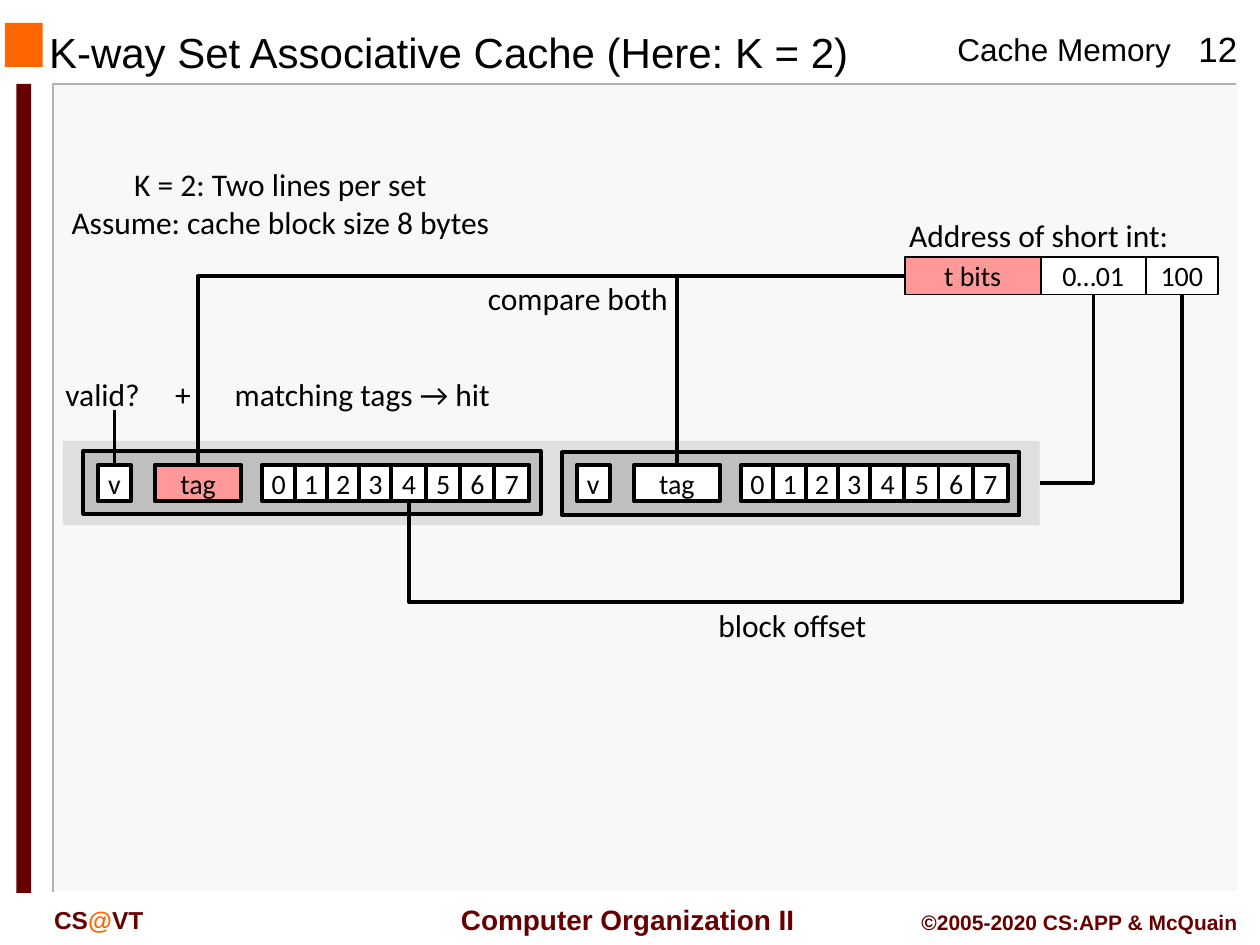
from dataclasses import dataclass
from typing import NamedTuple, Optional

from lxml.etree import SubElement
from pptx import Presentation
from pptx.dml.color import RGBColor
from pptx.enum.shapes import MSO_CONNECTOR, MSO_SHAPE
from pptx.enum.text import MSO_ANCHOR, MSO_AUTO_SIZE, PP_ALIGN
from pptx.oxml.ns import qn
from pptx.shapes.autoshape import Shape
from pptx.shapes.connector import Connector
from pptx.slide import Slide
from pptx.util import Cm, Pt


@dataclass(frozen=True)
class Theme:
    black: str = "000000"
    white: str = "FFFFFF"
    panel: str = "F8F8F8"
    panel_edge: str = "B2B2B2"
    orange: str = "FF6600"
    maroon: str = "660000"
    tag: str = "FF9999"
    cache_set: str = "DFDFDF"
    cache_line: str = "BFBFBF"
    frame_font: str = "Arial"
    body_font: str = "Calibri"
    title_size: float = 24
    number_size: float = 20
    label_size: float = 18
    cell_size: float = 16
    footer_size: float = 16
    course_size: float = 14
    credit_size: float = 12
    thin: float = 1
    wire: float = 2
    thick: float = 2.25


THEME = Theme()
TOP, LEFT, BOTTOM, RIGHT = range(4)


class Area(NamedTuple):
    """Left, top, width and height in centimetres."""
    left: float
    top: float
    width: float
    height: float

    def lengths(self) -> list[Cm]:
        return [Cm(value) for value in self]


class CacheLine(NamedTuple):
    left: float
    top: float
    tag_color: str


class CacheLineParts(NamedTuple):
    valid: Shape
    tag: Shape
    data: list[Shape]


def write(box: Shape, text: str, *, size: float, font: str = THEME.body_font,
          color: str = THEME.black, bold: bool = False,
          align: PP_ALIGN = PP_ALIGN.CENTER, wrap: bool = False,
          anchor: MSO_ANCHOR = MSO_ANCHOR.TOP, accent: str = "") -> None:
    """Fill a box with one paragraph per line; the accent word turns orange."""
    frame = box.text_frame
    frame.word_wrap = wrap
    frame.vertical_anchor = anchor
    for index, line in enumerate(text.split("\n")):
        para = frame.add_paragraph() if index else frame.paragraphs[0]
        para.alignment = align
        before, mark, after = line.partition(accent) if accent else (line, "", "")
        for piece, tint in ((before, color), (mark, THEME.orange), (after, color)):
            if piece:
                span = para.add_run()
                span.text = piece
                span.font.name = font
                span.font.size = Pt(size)
                span.font.bold = bold
                span.font.color.rgb = RGBColor.from_string(tint)


def add_label(page: Slide, area: Area, text: str, *,
              size: float = THEME.label_size, **style) -> Shape:
    box = page.shapes.add_textbox(*area.lengths())
    write(box, text, size=size, **style)
    box.text_frame.auto_size = MSO_AUTO_SIZE.SHAPE_TO_FIT_TEXT
    return box


def add_box(page: Slide, area: Area, fill: str, *, text: str = "",
            line: Optional[float] = None) -> Shape:
    box = page.shapes.add_shape(MSO_SHAPE.RECTANGLE, *area.lengths())
    box.shadow.inherit = False
    box.fill.solid()
    box.fill.fore_color.rgb = RGBColor.from_string(fill)
    if line is None:
        box.line.fill.background()
    else:
        box.line.color.rgb = RGBColor.from_string(THEME.black)
        box.line.width = Pt(line)
    if text:
        write(box, text, size=THEME.cell_size, anchor=MSO_ANCHOR.MIDDLE)
    return box


def add_edge(page: Slide, points: list[tuple[float, float]], color: str) -> None:
    """Draw an open outline along two sides of the panel."""
    start, *rest = [(Cm(x), Cm(y)) for x, y in points]
    builder = page.shapes.build_freeform(*start)
    builder.add_line_segments(rest, close=False)
    edge = builder.convert_to_shape()
    edge.shadow.inherit = False
    edge.fill.background()
    edge.line.color.rgb = RGBColor.from_string(color)
    edge.line.width = Pt(THEME.thin)


def style_wire(wire: Connector) -> None:
    wire.line.color.rgb = RGBColor.from_string(THEME.black)
    wire.line.width = Pt(THEME.wire)
    SubElement(wire._element.spPr, qn("a:effectLst"))


def join(page: Slide, start: Shape, start_side: int, end: Shape, end_side: int) -> Connector:
    """Join two boxes with a connector that turns one corner."""
    wire = page.shapes.add_connector(MSO_CONNECTOR.ELBOW, 0, 0, 0, 0)
    wire.begin_connect(start, start_side)
    wire.end_connect(end, end_side)
    wire._element.spPr.find(qn("a:prstGeom")).set("prst", "bentConnector2")
    style_wire(wire)
    return wire


def join_below(page: Slide, start: Shape, end: Shape, depth: float) -> None:
    """Join two bottom sides with a U-shaped connector that sinks to depth."""
    wire = join(page, start, BOTTOM, end, BOTTOM)
    run, drop = wire.width, wire.height
    center_x, center_y = wire.left + run // 2, wire.top + drop // 2
    bend = round((Cm(depth) - wire.top) / drop * 100000)
    wire.left, wire.top = center_x - drop // 2, center_y - run // 2
    wire.width, wire.height = drop, run
    frame = wire._element.spPr.find(qn("a:xfrm"))
    frame.attrib.pop("flipH", None)
    frame.set("rot", "5400000")
    geometry = wire._element.spPr.find(qn("a:prstGeom"))
    geometry.set("prst", "bentConnector3")
    adjustments = geometry.find(qn("a:avLst"))
    if adjustments is None:
        adjustments = SubElement(geometry, qn("a:avLst"))
    SubElement(adjustments, qn("a:gd"), name="adj1", fmla=f"val {bend}")


def add_cache_line(page: Slide, line: CacheLine) -> CacheLineParts:
    def cell(offset: float, width: float, text: str, fill: str = THEME.white) -> Shape:
        area = Area(line.left + offset, 9.37, width, 0.74)
        return add_box(page, area, fill, text=text, line=THEME.thick)

    add_box(page, Area(line.left, line.top, 9.22, 1.27), THEME.cache_line, line=THEME.thick)
    valid = cell(0.3, 0.66, "v")
    tag = cell(1.45, 1.73, "tag", line.tag_color)
    data = [cell(3.61 + 0.65 * min(i, 4) + 0.69 * max(i - 4, 0),
                 0.66 if i < 4 else 0.71, str(i)) for i in range(8)]
    return CacheLineParts(valid, tag, data)


def add_frame(page: Slide) -> None:
    add_box(page, Area(1.09, 1.7, 23.88, 16.28), THEME.panel)
    add_edge(page, [(24.92, 1.7), (1.07, 1.7), (1.07, 17.98)], THEME.panel_edge)
    add_edge(page, [(24.97, 1.7), (24.97, 17.98), (1.12, 17.98)], THEME.white)
    add_box(page, Area(0.1, 0.46, 0.76, 0.89), THEME.orange)
    add_box(page, Area(0.33, 1.69, 0.3, 16.31), THEME.maroon)
    font = THEME.frame_font
    footer = dict(font=font, color=THEME.maroon, bold=True)
    add_label(page, Area(19.05, 0.48, 4.85, 1.02), "Cache Memory", font=font,
              align=PP_ALIGN.LEFT)
    add_label(page, Area(23.7, 0.43, 1.7, 1.09), "12", size=THEME.number_size,
              font=font, wrap=True)
    add_label(page, Area(8.98, 18.06, 7.35, 0.94), "Computer Organization II",
              size=THEME.footer_size, anchor=MSO_ANCHOR.MIDDLE, **footer)
    add_label(page, Area(0.84, 18.11, 3.81, 0.84), "CS@VT", size=THEME.course_size,
              align=PP_ALIGN.LEFT, wrap=True, accent="@", **footer)
    add_label(page, Area(18.21, 18.21, 6.99, 0.76), "©2005-2020 CS:APP & McQuain",
              size=THEME.credit_size, align=PP_ALIGN.RIGHT, wrap=True, **footer)
    add_label(page, Area(0.74, 0.41, 16.87, 1.3), "K-way Set Associative Cache (Here: K = 2)",
              size=THEME.title_size, font=font, align=PP_ALIGN.LEFT, wrap=True)


def add_diagram(page: Slide) -> None:
    add_label(page, Area(1.07, 3.2, 9.17, 1.8),
              "K = 2: Two lines per set\nAssume: cache block size 8 bytes")
    add_label(page, Area(17.98, 4.24, 5.92, 1.02), "Address of short int:")
    add_label(page, Area(9.53, 5.51, 4.24, 1.02), "compare both")
    add_label(page, Area(4.42, 7.44, 5.77, 1.02), "matching tags → hit")
    add_label(page, Area(14.17, 12.09, 3.61, 1.02), "block offset")
    check = add_label(page, Area(1.07, 7.44, 3.1, 1.02), "valid?\t+", align=PP_ALIGN.LEFT)
    tabs = SubElement(check.text_frame.paragraphs[0]._p.get_or_add_pPr(), qn("a:tabLst"))
    SubElement(tabs, qn("a:tab"), pos=str(Cm(2.21)), algn="l")

    address, index, offset = [
        add_box(page, Area(left, 5.18, width, 0.76), fill, text=text, line=THEME.thin)
        for left, width, fill, text in ((18.24, 2.74, THEME.tag, "t bits"),
                                        (20.98, 2.12, THEME.white, "0…01"),
                                        (23.1, 1.45, THEME.white, "100"))]
    cache_set = add_box(page, Area(1.27, 8.89, 19.69, 1.7), THEME.cache_set)
    first, second = [add_cache_line(page, line) for line in (
        CacheLine(1.68, 9.09, THEME.tag), CacheLine(11.33, 9.12, THEME.white))]

    for line in (first, second):
        join(page, address, LEFT, line.tag, TOP)
    join(page, cache_set, RIGHT, index, BOTTOM)
    join_below(page, offset, first.data[4], 12.14)
    pointer = page.shapes.add_connector(MSO_CONNECTOR.STRAIGHT, Cm(2.31), Cm(8.26),
                                        Cm(2.31), Cm(9.37))
    pointer.end_connect(first.valid, TOP)
    style_wire(pointer)


def main() -> None:
    deck = Presentation()
    deck.slide_width, deck.slide_height = Cm(25.4), Cm(19.05)
    page = deck.slides.add_slide(deck.slide_layouts[6])
    add_frame(page)
    add_diagram(page)
    deck.save("out.pptx")


if __name__ == "__main__":
    main()
